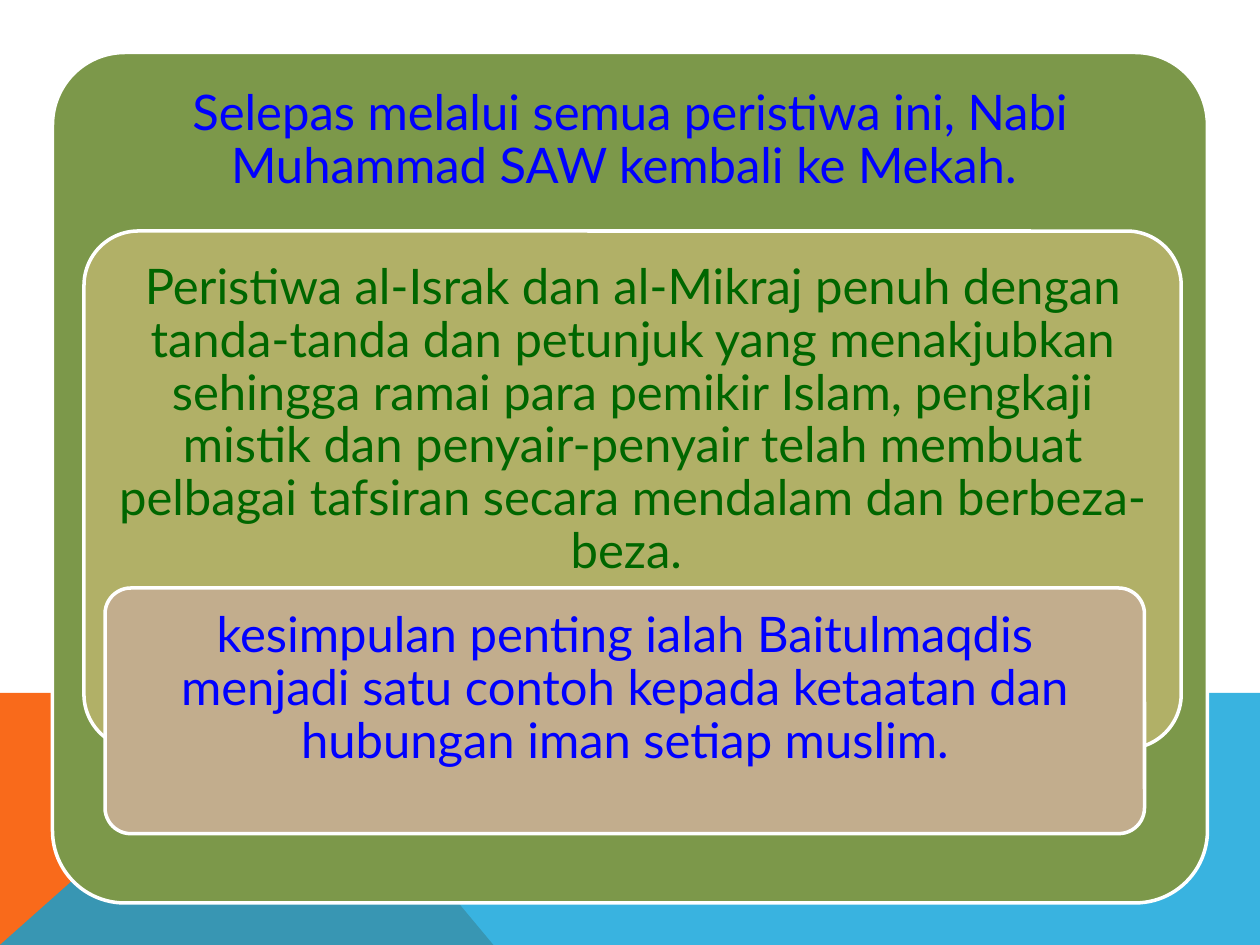
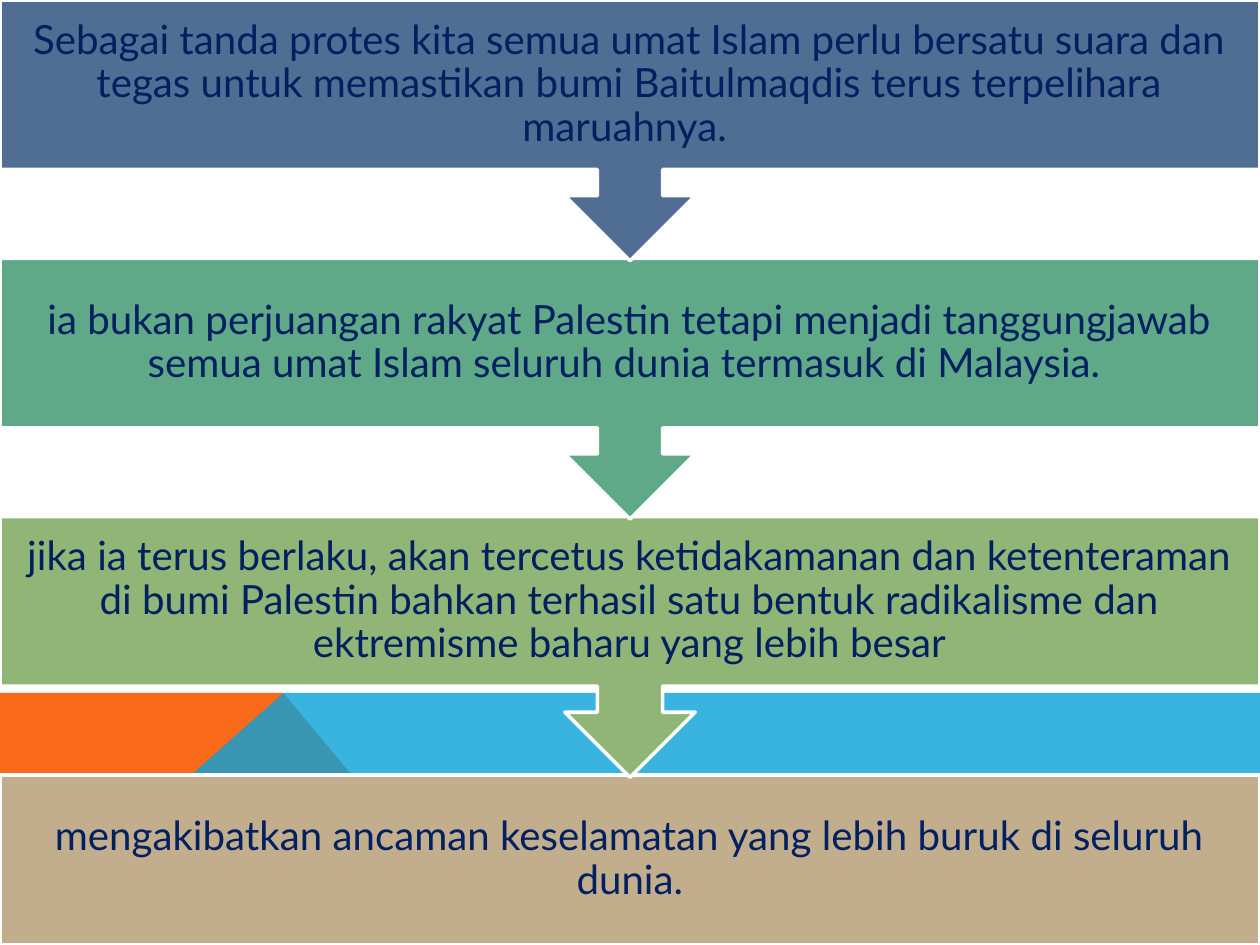
from lxml import etree
from pptx import Presentation
from pptx.dml.color import RGBColor
from pptx.enum.shapes import MSO_SHAPE
from pptx.enum.text import MSO_ANCHOR, PP_ALIGN
from pptx.oxml.ns import qn
from pptx.util import Inches, Pt

ROUND = MSO_SHAPE.ROUNDED_RECTANGLE
RECT = MSO_SHAPE.RECTANGLE
CALLOUT = MSO_SHAPE.UP_ARROW_CALLOUT
TOP, MIDDLE = MSO_ANCHOR.TOP, MSO_ANCHOR.MIDDLE
CENTER = PP_ALIGN.CENTER

COLS, ROWS = 120, 90  # one cell is a twelfth of an inch
FONT = "Lato"
COLORS = {
    "white": "FFFFFF", "orange": "F96A1B", "sky": "08A1D9",
    "moss": "7C984A", "olive": "B1B067", "sand": "C2AD8D",
    "slate": "506E94", "jade": "5FA989", "leaf": "90B576",
    "blue": "0000FF", "green": "006600", "navy": "002060",
}


class Deck:
    def __init__(self):
        self.show = Presentation()
        self.show.slide_width, self.show.slide_height = Inches(10), Inches(7.5)
        self.cell = self.show.slide_width // COLS
        self.slide = None

    def grid(self, *cells):
        return [round(c * self.cell) for c in cells]

    def color(self, name):
        return RGBColor.from_string(COLORS[name])

    def paint(self, shape, fill, line=None):
        shape.shadow.inherit = False
        shape.fill.solid()
        shape.fill.fore_color.rgb = self.color(fill)
        if line:
            shape.line.color.rgb = self.color(line)
            shape.line.width = Pt(2)
        else:
            shape.line.fill.background()

    def page(self):
        self.slide = self.show.slides.add_slide(self.show.slide_layouts[6])
        # Band along the foot of every slide
        top, peak = 66.24, 26.76
        self.outline([(0, ROWS), (0, top), (peak, top), (46.92, ROWS)], "orange")
        self.outline([(0, ROWS), (peak, top), (COLS, top), (COLS, ROWS)], "sky", 80)

    def outline(self, points, fill, alpha=100):
        pen = self.slide.shapes.build_freeform(*points[0], scale=self.cell)
        pen.add_line_segments(points[1:], close=True)
        shape = pen.convert_to_shape()
        self.paint(shape, fill)
        if alpha < 100:
            tint = shape.fill._xPr.find(qn("a:solidFill"))[0]
            etree.SubElement(tint, qn("a:alpha")).set("val", str(alpha * 1000))

    def block(self, kind, box, fill, adjust=None, turn=0):
        shape = self.slide.shapes.add_shape(kind, *self.grid(*box))
        self.paint(shape, fill, "white")
        shape.rotation = turn
        if adjust is not None:
            shape.adjustments[0] = adjust

    def text(self, words, box, color, size, inset, anchor):
        frame = self.slide.shapes.add_textbox(*self.grid(*box)).text_frame
        frame.word_wrap = True
        frame.vertical_anchor = anchor
        frame.margin_left = frame.margin_right = Inches(inset)
        frame.margin_top = frame.margin_bottom = Inches(inset)
        para = frame.paragraphs[0]
        para.text = words
        para.alignment = CENTER
        para.line_spacing = 0.9
        para.font.name, para.font.size = FONT, Pt(size)
        para.font.color.rgb = self.color(color)


# Nested panels: box, corner, text inset in cells, fill, ink, words
PANELS = [
    ((5, 5, 110, 81), 0.085, 2, "moss", "blue",
     "Selepas melalui semua peristiwa ini, Nabi Muhammad SAW kembali ke Mekah. "),
    ((8, 22, 104.5, 49.3), 0.105, 1.5, "olive", "green",
     "Peristiwa al-Israk dan al-Mikraj penuh dengan tanda-tanda dan petunjuk "
     "yang menakjubkan sehingga ramai para pemikir Islam, pengkaji mistik dan "
     "penyair-penyair telah membuat pelbagai tafsiran secara mendalam dan "
     "berbeza-beza. "),
    ((10, 56, 99, 23.4), 0.105, 0.7, "sand", "blue",
     "kesimpulan penting ialah Baitulmaqdis menjadi satu contoh kepada ketaatan "
     "dan hubungan iman setiap muslim."),
]

# Steps from top to bottom
STEPS = [
    ("slate", "Sebagai tanda protes kita semua umat Islam perlu bersatu suara dan "
     "tegas untuk memastikan bumi Baitulmaqdis terus terpelihara maruahnya. "),
    ("jade", "ia bukan perjuangan rakyat Palestin tetapi menjadi tanggungjawab "
     "semua umat Islam seluruh dunia termasuk di Malaysia. "),
    ("leaf", "jika ia terus berlaku, akan tercetus ketidakamanan dan ketenteraman "
     "di bumi Palestin bahkan terhasil satu bentuk radikalisme dan ektremisme "
     "baharu yang lebih besar"),
    ("sand", "mengakibatkan ancaman keselamatan yang lebih buruk di seluruh dunia."),
]
PITCH, DEPTH, BODY = 24.6, 24.84, 16.15


def nest(deck):
    deck.page()
    for box, corner, pad, fill, ink, words in PANELS:
        deck.block(ROUND, box, fill, corner)
        left, top, width, height = box
        inner = (left + pad, top + pad, width - 2 * pad, height - 2 * pad)
        deck.text(words, inner, ink, 28, 0.12, TOP)


def flow(deck):
    deck.page()
    last = len(STEPS) - 1
    # Drawn from the bottom up, so that each arrow lies over the next step
    for i in range(last, -1, -1):
        fill, words = STEPS[i]
        body = (0, i * PITCH, COLS, BODY)
        if i == last:
            deck.block(RECT, body, fill)
        else:
            deck.block(CALLOUT, (0, i * PITCH, COLS, DEPTH), fill, turn=180)
        deck.text(words, body, "navy", 23, 0.18, MIDDLE)


def main():
    deck = Deck()
    nest(deck)
    flow(deck)
    deck.show.save("out.pptx")


if __name__ == "__main__":
    main()
